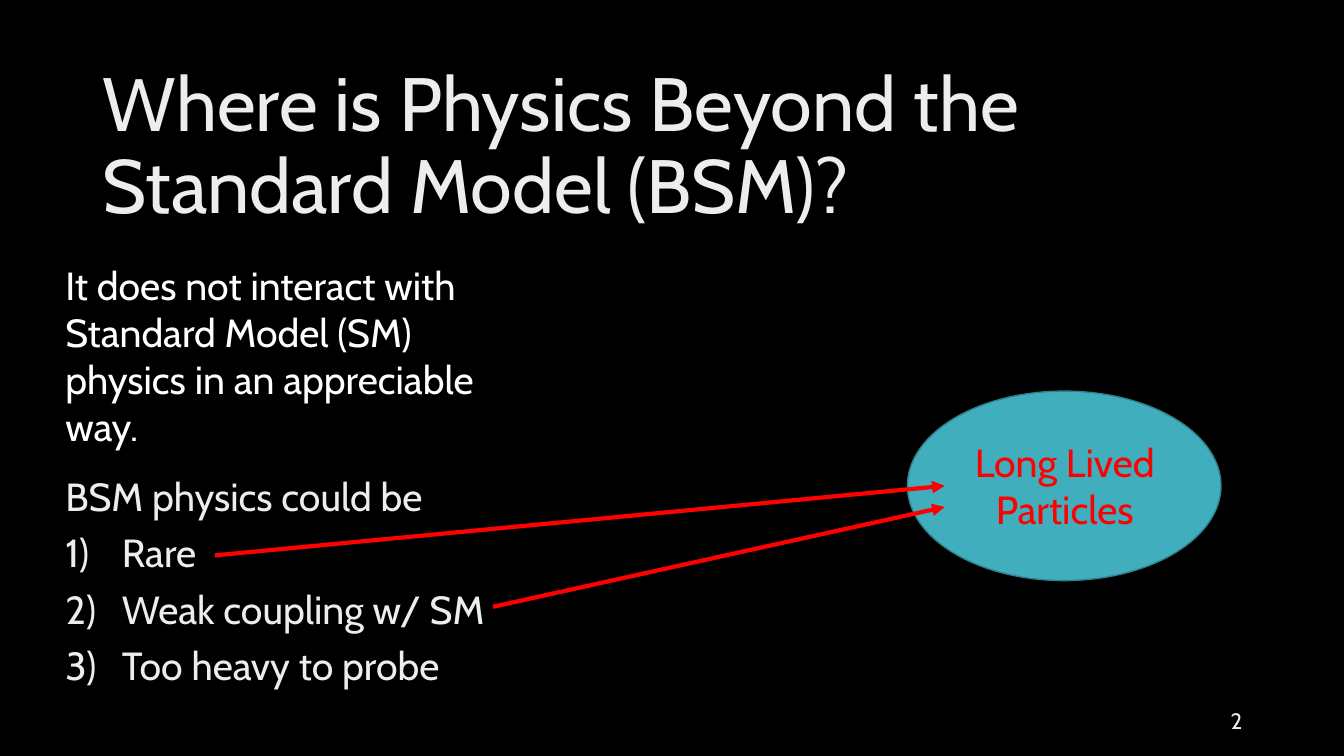
from lxml import etree
from pptx import Presentation
from pptx.dml.color import RGBColor
from pptx.enum import shapes, text
from pptx.oxml import ns
from pptx.util import Inches, Pt

FONT = "Cabin"
SOFT_WHITE = "EDEDED"
RED = "FF0000"


def color(value):
    return RGBColor.from_string(value)


def add_text(page, place, lines, size, shade, align=text.PP_ALIGN.LEFT,
             anchor=text.MSO_ANCHOR.TOP, spacing=1.0):
    box = page.shapes.add_textbox(*[Inches(length) for length in place])
    frame = box.text_frame
    frame.word_wrap = True
    frame.vertical_anchor = anchor
    frame.text = "\n".join(lines)
    for para in frame.paragraphs:
        para.alignment = align
        para.line_spacing = spacing
        for span in para.runs:
            span.font.name = FONT
            span.font.size = Pt(size)
            span.font.color.rgb = color(shade)
    return frame


deck = Presentation()
deck.slide_width = Inches(13.33)
deck.slide_height = Inches(7.5)
page = deck.slides.add_slide(deck.slide_layouts[6])
page.background.fill.solid()
page.background.fill.fore_color.rgb = color("000000")

ellipse = page.shapes.add_shape(
    shapes.MSO_SHAPE.OVAL, Inches(9), Inches(3.88), Inches(3.11), Inches(1.88))
ellipse.shadow.inherit = False
ellipse.fill.solid()
ellipse.fill.fore_color.rgb = color("41AEBD")
ellipse.line.color.rgb = color("30818C")
ellipse.line.width = Pt(1)

add_text(page, (0.92, 0.4, 11.5, 2.14),
         ["Where is Physics Beyond the Standard Model (BSM)?"],
         54, SOFT_WHITE, anchor=text.MSO_ANCHOR.MIDDLE, spacing=0.9)

options = add_text(page, (0.55, 4.69, 5.75, 2.66),
                   ["BSM physics could be", "Rare", "Weak coupling w/ SM",
                    "Too heavy to probe"],
                   28, SOFT_WHITE, spacing=0.9)
for para in options.paragraphs[1:]:
    para.space_before = Pt(10)
    properties = para._p.get_or_add_pPr()
    properties.set("marL", str(Inches(0.56)))
    properties.set("indent", str(-Inches(0.56)))
    number = etree.SubElement(properties, ns.qn("a:buAutoNum"))
    number.set("type", "arabicParenR")

add_text(page, (9.37, 4.3, 2.38, 1.04), ["Long Lived Particles"],
         28, RED, align=text.PP_ALIGN.CENTER)

for start_x, start_y, end_x, end_y in [(2.13, 5.51, 9.37, 4.82),
                                       (4.89, 6.02, 9.37, 5.03)]:
    arrow = page.shapes.add_connector(
        shapes.MSO_CONNECTOR.STRAIGHT, Inches(start_x), Inches(start_y),
        Inches(end_x), Inches(end_y))
    arrow.line.color.rgb = color(RED)
    arrow.line.width = Pt(3)
    head = etree.SubElement(arrow.line._get_or_add_ln(), ns.qn("a:tailEnd"))
    head.set("type", "triangle")
    etree.SubElement(arrow._element.spPr, ns.qn("a:effectLst"))

add_text(page, (0.55, 2.54, 4.76, 1.99),
         ["It does not interact with Standard Model (SM) physics in an "
          "appreciable way."], 28, "FFFFFF")

add_text(page, (9.42, 6.95, 3, 0.4), ["2"], 16, SOFT_WHITE,
         align=text.PP_ALIGN.RIGHT, anchor=text.MSO_ANCHOR.MIDDLE)

deck.save("out.pptx")
